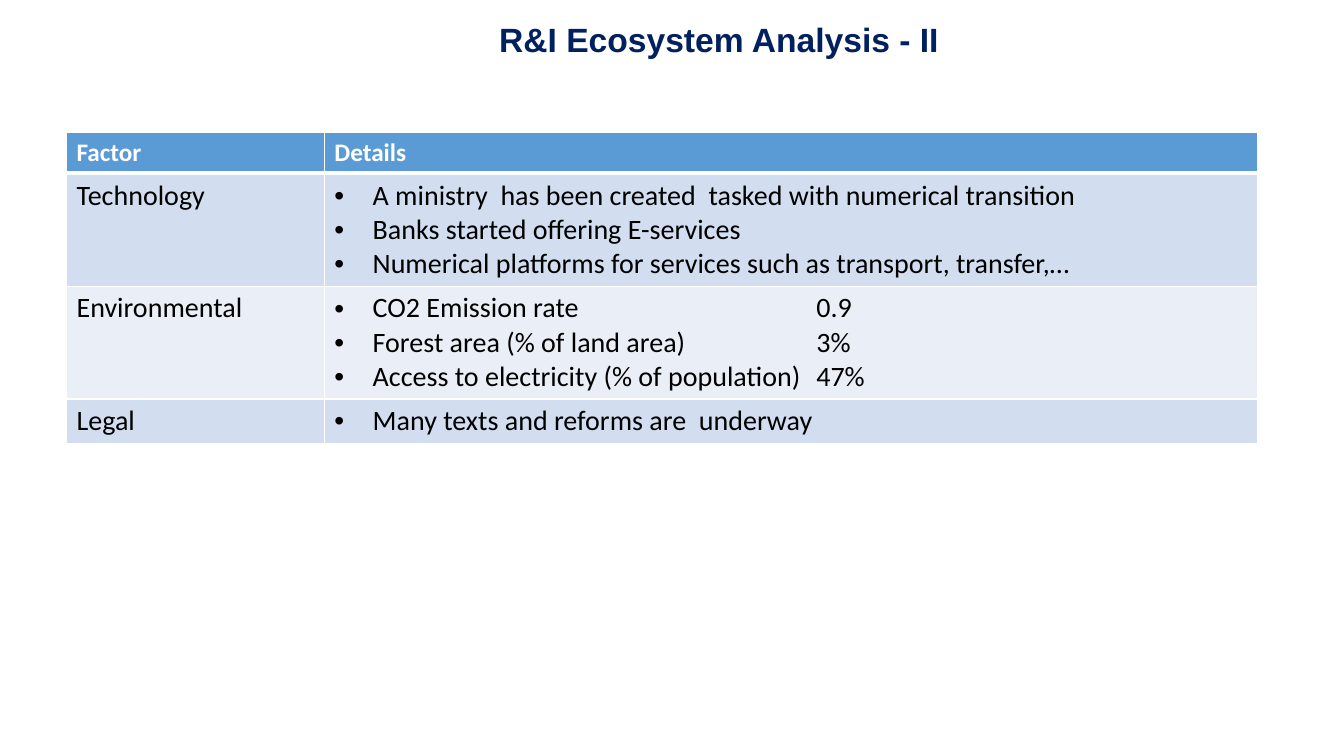
from lxml.etree import SubElement
from pptx import Presentation
from pptx.dml.color import RGBColor
from pptx.enum.text import PP_ALIGN as Align
from pptx.oxml.ns import qn
from pptx.util import Inches, Pt

COLORS = {"title": "002060", "header": "5B9BD5", "odd": "D2DEEF",
          "even": "EAEFF7", "line": "FFFFFF", "text": "000000"}
HEADINGS = ("Factor", "Details")
FACTORS = [
    ("Technology", ["A ministry  has been created  tasked with numerical transition",
                    "Banks started offering E-services",
                    "Numerical platforms for services such as transport, transfer,…"]),
    ("Environmental", ["CO2 Emission rate\t0.9",
                       "Forest area (% of land area)\t3%",
                       "Access to electricity (% of population)\t47%"]),
    ("Legal", ["Many texts and reforms are  underway"]),
]
FACTOR_SHARE = 0.2165
HEADER_HEIGHT, LINE_HEIGHT, ROW_PADDING = 0.41, 0.34, 0.1
BULLET_INDENT, VALUE_TAB = 0.38, 4.78


def style_font(font, name, size, color, bold=False):
    """Set the face, size, colour and weight of a font."""
    font.name, font.size, font.bold = name, Pt(size), bold
    font.color.rgb = RGBColor.from_string(COLORS[color])


def add_bullet(para):
    """Give a paragraph a hanging bullet and a tab stop for its value."""
    props = para._p.get_or_add_pPr()
    props.set("marL", str(Inches(BULLET_INDENT)))
    props.set("indent", str(-Inches(BULLET_INDENT)))
    SubElement(props, qn("a:buFont"), typeface="Arial")
    SubElement(props, qn("a:buChar"), char="•")
    if "\t" in para.text:
        tabs = SubElement(props, qn("a:tabLst"))
        SubElement(tabs, qn("a:tab"), pos=str(Inches(VALUE_TAB)), algn="l")


def add_borders(cell, bottom):
    """Draw the four borders of a cell, the bottom one at its own width."""
    props = cell._tc.get_or_add_tcPr()
    for index, (side, width) in enumerate(zip("LRTB", (1, 1, 1, bottom))):
        line = props.makeelement(qn(f"a:ln{side}"), {"w": str(Pt(width))})
        fill = SubElement(line, qn("a:solidFill"))
        SubElement(fill, qn("a:srgbClr"), val=COLORS["line"])
        props.insert(index, line)


def fill_cell(cell, lines, fill, size=20, color="text", bold=False, bullets=False, bottom=1):
    """Write the lines of a cell and set its fill and borders."""
    cell.text = "\n".join(lines)
    cell.fill.solid()
    cell.fill.fore_color.rgb = RGBColor.from_string(COLORS[fill])
    add_borders(cell, bottom)
    for para in cell.text_frame.paragraphs:
        style_font(para.font, "Calibri", size, color, bold)
        if bullets:
            add_bullet(para)


def add_title(page, left, top, width, height):
    """Place the centred slide title in the given box."""
    box = page.shapes.add_textbox(*map(Inches, (left, top, width, height)))
    box.text_frame.word_wrap = True
    para = box.text_frame.paragraphs[0]
    para.text = "R&I Ecosystem Analysis - II"
    para.alignment = Align.CENTER
    style_font(para.font, "Arial", 24, "title", bold=True)


def add_factor_table(page, left, top, width):
    """Place the table of factors, with rows as tall as their lines."""
    heights = [HEADER_HEIGHT] + [len(details) * LINE_HEIGHT + ROW_PADDING
                                 for _, details in FACTORS]
    frame = page.shapes.add_table(len(heights), len(HEADINGS),
                                  *map(Inches, (left, top, width, sum(heights))))
    table = frame.table
    table.horz_banding = False
    for column, share in zip(table.columns, (FACTOR_SHARE, 1 - FACTOR_SHARE)):
        column.width = Inches(width * share)
    for row, height in zip(table.rows, heights):
        row.height = Inches(height)
    for index, heading in enumerate(HEADINGS):
        fill_cell(table.cell(0, index), [heading], "header", 18, "line", bold=True, bottom=3)
    for index, (factor, details) in enumerate(FACTORS, 1):
        fill = "odd" if index % 2 else "even"
        fill_cell(table.cell(index, 0), [factor], fill)
        fill_cell(table.cell(index, 1), details, fill, bullets=True)


def main():
    """Build the slide and save the deck."""
    deck = Presentation()
    deck.slide_width, deck.slide_height = Inches(13.33), Inches(7.5)
    page = deck.slides.add_slide(deck.slide_layouts[6])
    add_title(page, 2.29, 0.14, 9.68, 0.5)
    add_factor_table(page, 0.66, 1.31, 11.81)
    deck.save("out.pptx")


if __name__ == "__main__":
    main()
